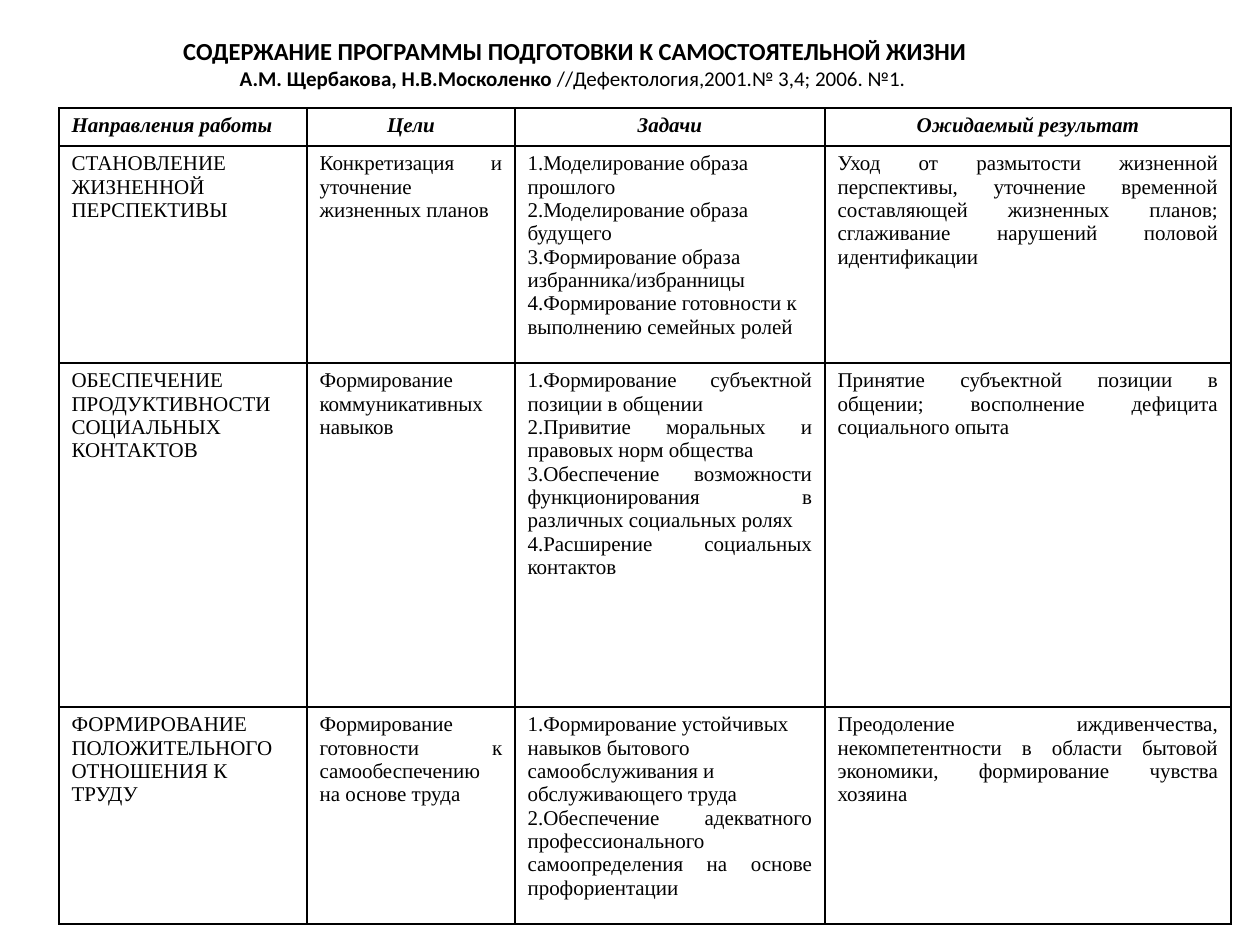
from dataclasses import dataclass

from lxml import etree
from pptx import Presentation
from pptx.dml.color import RGBColor
from pptx.enum.text import MSO_ANCHOR, PP_ALIGN
from pptx.oxml.ns import qn
from pptx.util import Pt

LEFT, CENTER, JUSTIFY = PP_ALIGN.LEFT, PP_ALIGN.CENTER, PP_ALIGN.JUSTIFY
MIDDLE = MSO_ANCHOR.MIDDLE
PX_PER_INCH = 126


@dataclass(frozen=True)
class Theme:
    ink: str = "000000"
    paper: str = "FFFFFF"
    title_font: str = "Calibri"
    table_font: str = "Times New Roman"
    title_size: int = 14
    body_size: int = 12
    border: int = 1


@dataclass(frozen=True)
class Line:
    text: str
    align: PP_ALIGN = JUSTIFY
    numbered: bool = False


THEME = Theme()
TITLE_FORMAT = {"name": THEME.title_font, "size": Pt(THEME.title_size), "bold": True}
AUTHOR_FORMAT = TITLE_FORMAT | {"size": Pt(THEME.body_size)}
SOURCE_FORMAT = AUTHOR_FORMAT | {"bold": False}
BODY_FORMAT = {"name": THEME.table_font, "size": Pt(THEME.body_size),
               "bold": False, "italic": False}
HEADER_FORMAT = BODY_FORMAT | {"bold": True, "italic": True}

COLUMN_WIDTHS = (248, 208, 310, 406)
ROW_HEIGHTS = (38, 217, 344, 217)


def plain(*texts: str) -> list[Line]:
    return [Line(text) for text in texts]


def steps(*texts: str, align: PP_ALIGN = JUSTIFY) -> list[Line]:
    return [Line(text, align, True) for text in texts]


HEADER = [
    plain("Направления работы"),
    *([Line(text, CENTER)] for text in ("Цели", "Задачи", "Ожидаемый результат")),
]
BODY = [
    [
        plain("СТАНОВЛЕНИЕ", "ЖИЗНЕННОЙ", "ПЕРСПЕКТИВЫ"),
        plain("Конкретизация и уточнение жизненных планов"),
        steps("Моделирование образа прошлого",
              "Моделирование образа будущего",
              "Формирование образа избранника/избранницы",
              "Формирование готовности к выполнению семейных ролей", align=LEFT),
        plain("Уход от размытости жизненной перспективы, уточнение временной "
              "составляющей жизненных планов; сглаживание нарушений половой "
              "идентификации"),
    ],
    [
        plain("ОБЕСПЕЧЕНИЕ ПРОДУКТИВНОСТИ СОЦИАЛЬНЫХ ", "КОНТАКТОВ"),
        plain("Формирование коммуникативных навыков"),
        steps("Формирование субъектной позиции в общении",
              "Привитие моральных и правовых норм общества",
              "Обеспечение возможности функционирования в различных социальных ролях",
              "Расширение социальных контактов"),
        plain("Принятие субъектной позиции в общении; восполнение дефицита "
              "социального опыта"),
    ],
    [
        plain("ФОРМИРОВАНИЕ", "ПОЛОЖИТЕЛЬНОГО ", "ОТНОШЕНИЯ К ", "ТРУДУ"),
        plain("Формирование готовности к самообеспечению на основе труда"),
        steps("Формирование устойчивых навыков бытового самообслуживания и "
              "обслуживающего труда", align=LEFT)
        + steps("Обеспечение адекватного профессионального самоопределения на "
                "основе профориентации"),
        plain("Преодоление иждивенчества, некомпетентности в области бытовой "
              "экономики, формирование чувства хозяина"),
    ],
]


def px(length: int) -> int:
    return round(length * 914400 / PX_PER_INCH)


def add_span(para, text: str, formats: dict) -> None:
    span = para.add_run()
    span.text = text
    for name, value in formats.items():
        setattr(span.font, name, value)
    span.font.color.rgb = RGBColor.from_string(THEME.ink)


def number_paragraph(para) -> None:
    properties = para._p.get_or_add_pPr()
    properties.set("marL", "0")
    properties.set("indent", "0")
    etree.SubElement(properties, qn("a:buFontTx"))
    etree.SubElement(properties, qn("a:buAutoNum"), type="arabicPeriod")


def draw_borders(cell) -> None:
    properties = cell._tc.get_or_add_tcPr()
    for position, side in enumerate(("lnL", "lnR", "lnT", "lnB")):
        border = etree.Element(qn(f"a:{side}"), w=str(Pt(THEME.border)))
        fill = etree.SubElement(border, qn("a:solidFill"))
        etree.SubElement(fill, qn("a:srgbClr"), val=THEME.ink)
        properties.insert(position, border)


def fill_cell(cell, lines: list[Line], formats: dict) -> None:
    cell.fill.solid()
    cell.fill.fore_color.rgb = RGBColor.from_string(THEME.paper)
    draw_borders(cell)
    frame = cell.text_frame
    for index, line in enumerate(lines):
        para = frame.add_paragraph() if index else frame.paragraphs[0]
        para.alignment = line.align
        if line.numbered:
            number_paragraph(para)
        add_span(para, line.text, formats)


def add_title(page) -> None:
    box = page.shapes.add_textbox(px(0), px(29), px(1150), px(69))
    frame = box.text_frame
    frame.word_wrap = True
    frame.vertical_anchor = MIDDLE
    para = frame.paragraphs[0]
    para.alignment = CENTER
    add_span(para, "СОДЕРЖАНИЕ ПРОГРАММЫ ПОДГОТОВКИ К САМОСТОЯТЕЛЬНОЙ ЖИЗНИ", TITLE_FORMAT)
    para.add_line_break()
    add_span(para, "А.М. Щербакова, Н.В.Москоленко", AUTHOR_FORMAT)
    add_span(para, " //Дефектология,2001.№ 3,4; 2006. №1. ", SOURCE_FORMAT)


def add_program_table(page) -> None:
    rows = [HEADER, *BODY]
    table = page.shapes.add_table(
        len(rows), len(COLUMN_WIDTHS), px(59), px(108),
        px(sum(COLUMN_WIDTHS)), px(sum(ROW_HEIGHTS))).table
    table.first_row = table.horz_banding = False
    for column, width in zip(table.columns, COLUMN_WIDTHS):
        column.width = px(width)
    for row, height, contents in zip(table.rows, ROW_HEIGHTS, rows):
        row.height = px(height)
        formats = HEADER_FORMAT if contents is HEADER else BODY_FORMAT
        for cell, lines in zip(row.cells, contents):
            fill_cell(cell, lines, formats)


def main() -> None:
    deck = Presentation()
    deck.slide_width, deck.slide_height = px(1260), px(945)
    page = deck.slides.add_slide(deck.slide_layouts[6])

    # Heading and its source
    add_title(page)

    # Program: directions, goals, tasks, results
    add_program_table(page)

    deck.save("out.pptx")


if __name__ == "__main__":
    main()
